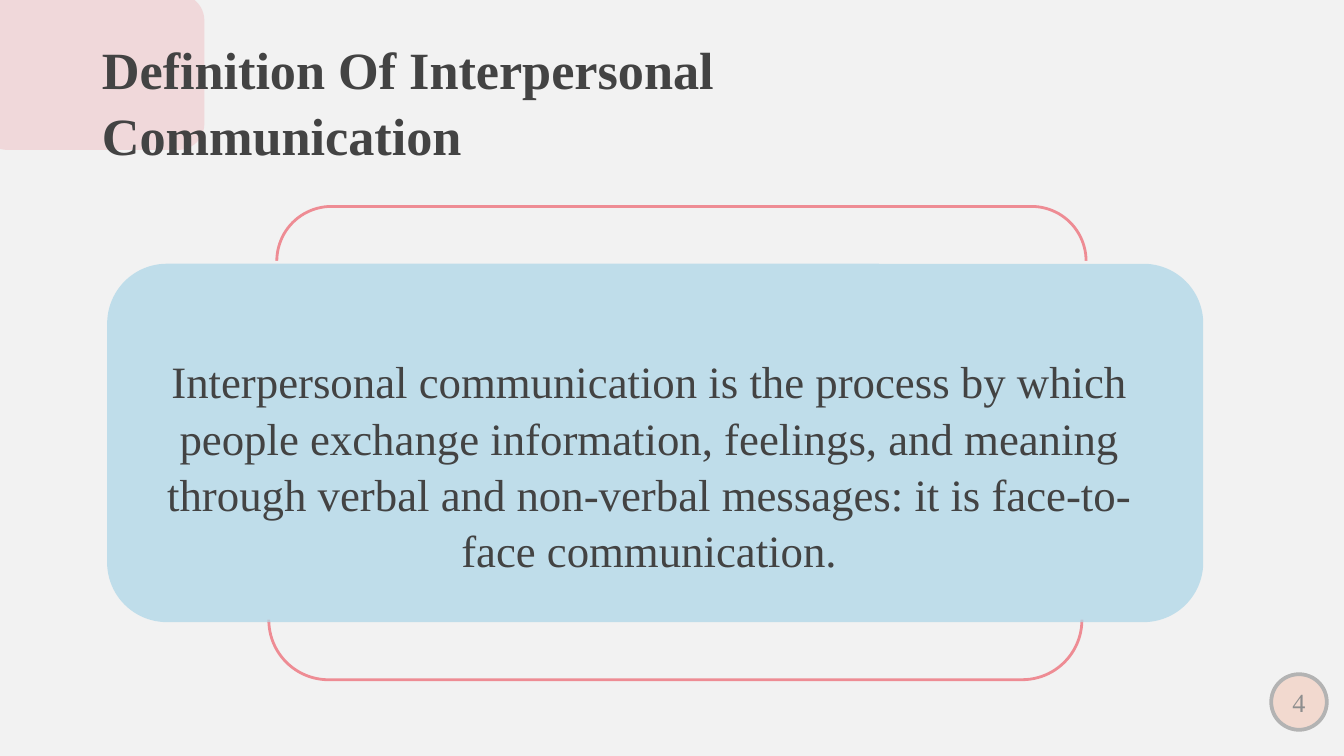
from lxml import etree
from pptx import Presentation
from pptx.dml.color import RGBColor
from pptx.enum.shapes import MSO_SHAPE as Preset
from pptx.enum.text import MSO_ANCHOR as Anchor, PP_ALIGN as Align
from pptx.oxml.ns import qn
from pptx.util import Pt

PAPER = RGBColor(0xF2, 0xF2, 0xF2)
ROSE = RGBColor(0xEE, 0x8C, 0x94)
SKY = RGBColor(0xAE, 0xD7, 0xE8)
PEACH = RGBColor(0xF2, 0xD9, 0xCF)
RING = RGBColor(0xB3, 0xB3, 0xB3)
INK = RGBColor(0x43, 0x43, 0x43)
GRAY = RGBColor(0x8E, 0x8E, 0x8E)

deck = Presentation()
deck.slide_width, deck.slide_height = Pt(720), Pt(405)
page = deck.slides.add_slide(deck.slide_layouts[6])
page.background.fill.solid()
page.background.fill.fore_color.rgb = PAPER


def add_panel(preset, bounds, fill=None, opacity=100, line=None, width=1.5):
    panel = page.shapes.add_shape(preset, *map(Pt, bounds))
    panel.shadow.inherit = False
    if fill is None:
        panel.fill.background()
    else:
        panel.fill.solid()
        panel.fill.fore_color.rgb = fill
        if opacity < 100:
            color = panel.fill._xPr.find(qn("a:solidFill"))[0]
            etree.SubElement(color, qn("a:alpha"), val=str(opacity * 1000))
    if line is None:
        panel.line.fill.background()
    else:
        panel.line.color.rgb = line
        panel.line.width = Pt(width)
    return panel


def write_text(box, text, size, color, align, inset=7.2, spacing=1.05, bold=False):
    frame = box.text_frame
    frame.word_wrap = True
    frame.margin_left = frame.margin_right = Pt(inset)
    frame.margin_top = frame.margin_bottom = Pt(inset)
    para = frame.paragraphs[0]
    para.text = text
    para.alignment = align
    para.line_spacing = spacing
    para.font.name = "Times New Roman"
    para.font.size = Pt(size)
    para.font.bold = bold
    para.font.color.rgb = color
    return frame


add_panel(Preset.ROUNDED_RECTANGLE, (-10, -3, 119.5, 83.3), ROSE, 25)

title = page.shapes.add_textbox(Pt(47.5), Pt(11), Pt(511), Pt(119))
write_text(title, "Definition Of Interpersonal Communication", 28, INK,
           Align.LEFT, bold=True)

for outline, mask in [
    ((144, 172, 435.6, 192.2), (99.4, 157, 514, 175)),
    ((148.3, 110.6, 433.6, 175.7), (115.2, 139.8, 512, 160)),
]:
    add_panel(Preset.ROUNDED_RECTANGLE, outline, line=ROSE)
    add_panel(Preset.RECTANGLE, mask, PAPER)

add_panel(Preset.ROUNDED_RECTANGLE, (57.4, 141.3, 587.2, 192), SKY, 74)

definition = page.shapes.add_textbox(Pt(69), Pt(181), Pt(557.5), Pt(118))
write_text(definition,
           "Interpersonal communication is the process by which people exchange "
           "information, feelings, and meaning through verbal and non-verbal "
           "messages: it is face-to-face communication.",
           24, INK, Align.CENTER)

badge = add_panel(Preset.OVAL, (681, 361.2, 29.8, 29.8), PEACH, line=RING, width=2)
number = write_text(badge, "4", 14, GRAY, Align.CENTER, inset=0, spacing=1)
number.vertical_anchor = Anchor.MIDDLE

deck.save("out.pptx")
